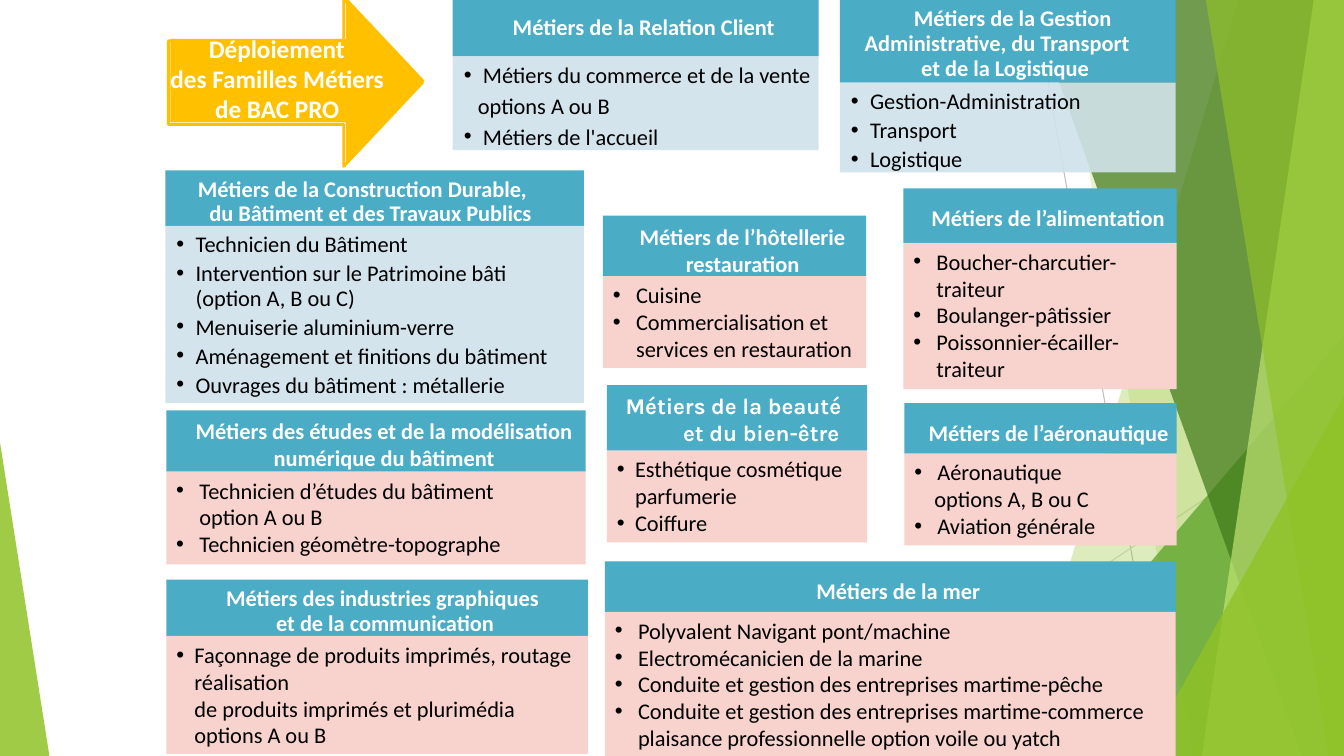
from lxml.etree import SubElement
from pptx import Presentation
from pptx.dml.color import RGBColor
from pptx.enum.shapes import MSO_CONNECTOR, MSO_SHAPE
from pptx.enum.text import MSO_ANCHOR, MSO_AUTO_SIZE, PP_ALIGN
from pptx.oxml.ns import qn
from pptx.util import Inches, Pt

WIDE, HIGH = 13.33, 7.5
TEAL, BLUE, PINK, GOLD = "4AACC5", "D0E2EA", "F8D2CC", "FFC000"
WHITE, BLACK = "FFFFFF", "000000"
SHIFT = 0.16  # usual indent of a centred heading

# Right-hand facets: points, colour, opacity in percent
BACK = [
    ([(12.28, 0), (WIDE, 0), (WIDE, HIGH), (10.04, HIGH)], "90C226", 30),
    ([(10.5, 0), (WIDE, 0), (WIDE, HIGH), (11.83, HIGH)], "90C226", 20),
]
FRONT = [
    ([(10.21, 0), (WIDE, 0), (WIDE, HIGH), (12.91, HIGH)], "3F7819", 70),
    ([(13.03, 0), (WIDE, 0), (WIDE, HIGH), (11.92, HIGH)], "C0E474", 70),
    ([(11.96, 0), (WIDE, 0), (WIDE, HIGH), (13.18, HIGH)], "90C226", 65),
]

# Cards: box (left, top, width, height), heading height,
# heading lines (shift, text), list items; a pair is an unmarked line and its indent
BLUES = [
    ((1.64, 1.69, 4.15, 2.31), 0.55,
     [(-0.24, "Métiers de la Construction Durable,"),
      (SHIFT, "du Bâtiment et des Travaux Publics")],
     ["Technicien du Bâtiment",
      "Intervention sur le Patrimoine bâti\v(option A, B ou C)",
      "Menuiserie aluminium-verre", "Aménagement et finitions du bâtiment",
      "Ouvrages du bâtiment : métallerie"], 3.2),
    ((4.49, 0, 3.63, 1.49), 0.56, [(SHIFT, "Métiers de la Relation Client")],
     ["Métiers du commerce et de la vente", ("options A ou B", 0.25),
      "Métiers de l'accueil"], 4.5),
    ((8.33, 0, 3.33, 1.71), 0.82,
     [(0.1, "Métiers de la Gestion"), (-0.21, "Administrative, du Transport"),
      (SHIFT, "et de la Logistique")],
     ["Gestion-Administration", "Transport", "Logistique"], 3.2),
]
PINKS = [
    ((1.65, 5.75, 4.18, 1.73), 0.56,
     [(0.11, "Métiers des industries graphiques"), (SHIFT, "et de la communication")],
     ["Façonnage de produits imprimés, routage réalisation\v"
      "de produits imprimés et plurimédia options A ou B"], 0.18, 0.92, "Calibri"),
    ((8.96, 1.87, 2.71, 1.99), 0.54, [(SHIFT, "Métiers de l’alimentation")],
     ["Boucher-charcutier-traiteur", "Boulanger-pâtissier",
      "Poissonnier-écailler-traiteur"], 0.23, 1, "Calibri"),
    ((1.65, 4.07, 4.16, 1.53), 0.61,
     [(SHIFT, "Métiers des études et de la modélisation\vnumérique du bâtiment")],
     ["Technicien d’études du bâtiment\voption A ou B",
      "Technicien géomètre-topographe"], 0.23, 1, "Calibri"),
    ((6.02, 3.82, 2.58, 1.56), 0.65,
     [(-0.07, "Métiers de la beauté"), (0.55, "et du bien-être")],
     ["Esthétique cosmétique parfumerie", "Coiffure"], 0.18, 1, "Karla"),
    ((5.98, 2.14, 2.61, 1.51), 0.6, [(SHIFT, "Métiers de l’hôtellerie\vrestauration")],
     ["Cuisine", "Commercialisation et services en restauration"], 0.23, 1, "Calibri"),
    ((8.97, 4, 2.7, 1.41), 0.5, [(SHIFT, "Métiers de l’aéronautique")],
     ["Aéronautique", ("options A, B ou C", 0.2), "Aviation générale"],
     0.23, 1, "Calibri"),
    ((6, 5.57, 5.66, 1.93), 0.5, [(SHIFT, "Métiers de la mer")],
     ["Polyvalent Navigant pont/machine", "Electromécanicien de la marine",
      "Conduite et gestion des entreprises martime-pêche",
      "Conduite et gestion des entreprises martime-commerce "
      "plaisance professionnelle option voile ou yatch"], 0.23, 1, "Calibri"),
]


def color(code):
    return RGBColor.from_string(code)


def paint(shape, code, alpha=100):
    shape.shadow.inherit = False
    shape.line.fill.background()
    shape.fill.solid()
    shape.fill.fore_color.rgb = color(code)
    if alpha < 100:
        tone = shape.fill._xPr.find(".//" + qn("a:srgbClr"))
        SubElement(tone, qn("a:alpha"), val=str(alpha * 1000))


def preset(slide, kind, box):
    return slide.shapes.add_shape(kind, *map(Inches, box))


def frame(shape, side, top):
    area = shape.text_frame
    area.word_wrap = True
    area.auto_size = MSO_AUTO_SIZE.NONE
    area.vertical_anchor = MSO_ANCHOR.TOP
    area.margin_left = area.margin_right = Inches(side)
    area.margin_top, area.margin_bottom = Inches(top), 0
    return area


def style(para, size, code, bold=False, face="Calibri"):
    font = para.font
    font.size, font.bold, font.name = Pt(size), bold, face
    font.color.rgb = color(code)


def center(area, lines, size, face="Calibri", pitch=1):
    """Centred lines, each nudged sideways by its own indent."""
    area.text = "\n".join(text for _, text in lines)
    for para, (shift, _) in zip(area.paragraphs, lines):
        para.alignment, para.line_spacing = PP_ALIGN.CENTER, pitch
        props = para._p.get_or_add_pPr()
        props.set("marL" if shift >= 0 else "marR", str(Inches(abs(shift))))
        props.set("indent", "0")
        style(para, size, WHITE, True, face)


def bullets(area, items, left, hang, pitch=1, gap=0):
    pairs = [item if isinstance(item, tuple) else (item, None) for item in items]
    area.text = "\n".join(text for text, _ in pairs)
    for para, (_, plain) in zip(area.paragraphs, pairs):
        para.alignment, para.line_spacing = PP_ALIGN.LEFT, pitch
        para.space_before = Pt(gap)
        style(para, 16, BLACK)
        props = para._p.get_or_add_pPr()
        marked = plain is None
        props.set("marL", str(Inches(left if marked else plain)))
        props.set("indent", str(Inches(-hang if marked else 0)))
        if marked:
            SubElement(props, qn("a:buFont"), typeface="Arial")
            SubElement(props, qn("a:buChar"), char="•")


def card(slide, box, head, lines, fill, alpha=100, pitch=1, face="Calibri"):
    """Teal heading above a tinted panel; returns the panel."""
    left, top, width, height = box
    title = preset(slide, MSO_SHAPE.RECTANGLE, (left, top, width, head))
    paint(title, TEAL)
    single = len(lines) == 1 and "\v" not in lines[0][1]
    center(frame(title, 0, 0.16 if single else 0.07), lines, 16, face, pitch)
    panel = preset(slide, MSO_SHAPE.RECTANGLE, (left, top + head, width, height - head))
    paint(panel, fill, alpha)
    return panel


def facets(slide, group):
    for points, code, alpha in group:
        first, *rest = [tuple(map(Inches, point)) for point in points]
        build = slide.shapes.build_freeform(*first)
        build.add_line_segments(rest)
        paint(build.convert_to_shape(), code, alpha)


def wedge(slide, box, code, alpha, tip):
    shape = preset(slide, MSO_SHAPE.ISOSCELES_TRIANGLE, box)
    shape.adjustments[0] = tip
    paint(shape, code, alpha)


def decor(slide):
    for ends, code in [((10.25, 0, 11.58, HIGH), "BFBFBF"),
                       ((WIDE, 4.03, 8.12, HIGH), "D9D9D9")]:
        line = slide.shapes.add_connector(MSO_CONNECTOR.STRAIGHT, *map(Inches, ends))
        line.line.color.rgb, line.line.width = color(code), Pt(0.75)
        SubElement(line._element.spPr, qn("a:effectLst"))
    facets(slide, BACK)
    wedge(slide, (9.77, 3.33, 3.56, 4.17), "54A021", 72, 1)
    facets(slide, FRONT)
    wedge(slide, (11.34, 3.93, 1.99, 3.57), "90C226", 80, 1)
    wedge(slide, (0, 4.39, 0.49, 3.11), "90C226", 85, 0)


def banner(slide, left, top):
    """Gold arrow, its offset outline, and the slide title over both."""
    for step in (0.02, 0):
        arrow = preset(slide, MSO_SHAPE.RIGHT_ARROW, (left + step, top - step, 2.52, 1.66))
        arrow.adjustments[0], arrow.adjustments[1] = 0.5, 0.47
        paint(arrow, GOLD)
    arrow.fill.background()
    arrow.line.color.rgb, arrow.line.width = color(GOLD), Pt(2)
    title = slide.shapes.title
    title.left, title.top = Inches(left - 0.06), Inches(top + 0.33)
    title.width, title.height = Inches(2.39), Inches(0.94)
    center(frame(title, 0, 0.01), [(-0.12, "Déploiement"), (0.01, "des Familles Métiers"),
                                   (0.01, "de BAC PRO")], 18)
    slide.shapes._spTree.append(title._element)  # bring to front


def main():
    deck = Presentation()
    deck.slide_width, deck.slide_height = Inches(WIDE), Inches(HIGH)
    slide = deck.slides.add_slide(deck.slide_layouts[5])
    decor(slide)
    banner(slide, 1.67, -0.01)
    for box, head, lines, items, gap in BLUES:
        panel = card(slide, box, head, lines, BLUE, 90, 0.92)
        bullets(frame(panel, 0, 0.07), items, 0.3, 0.19, Pt(17.5), gap)
    for box, head, lines, items, hang, pitch, face in PINKS:
        panel = card(slide, box, head, lines, PINK, 100, pitch, face)
        bullets(frame(panel, 0.1, 0.05), items, hang, hang)
    deck.save("out.pptx")


if __name__ == "__main__":
    main()
